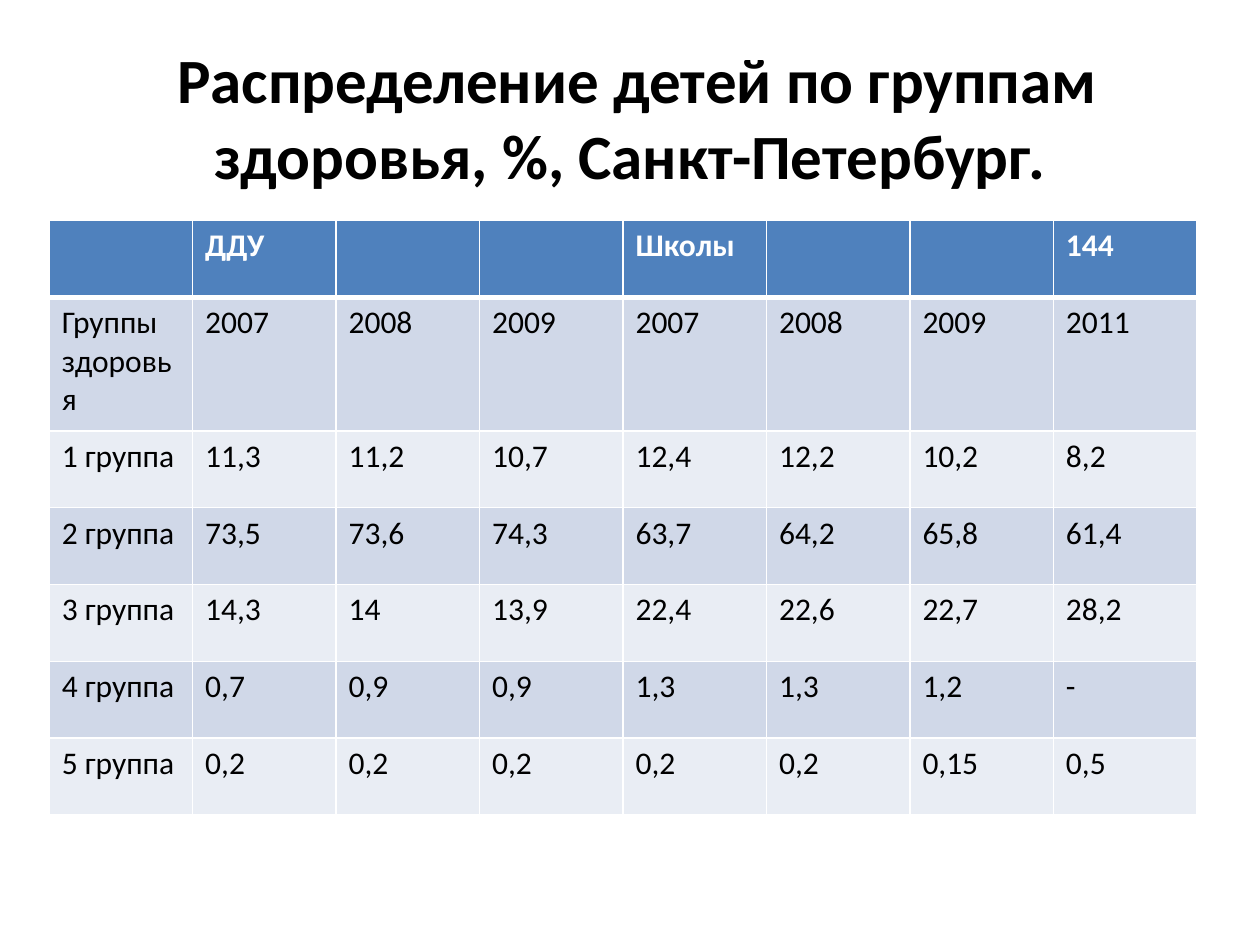
from dataclasses import dataclass

from lxml.etree import SubElement
from pptx import Presentation
from pptx.dml.color import RGBColor as Rgb
from pptx.enum.text import MSO_ANCHOR as Anchor, PP_ALIGN as Align
from pptx.oxml.ns import qn
from pptx.util import Inches, Pt


@dataclass(frozen=True)
class Theme:
    font: str = "Calibri"
    title_size: int = 36
    cell_size: int = 18
    ink: str = "000000"
    white: str = "FFFFFF"
    header: str = "4F81BD"
    bands: tuple = ("E9EDF4", "D0D8E8")
    thin: int = 1
    thick: int = 3


HEALTH_GROUPS = [
    ["", "ДДУ", "", "", "Школы", "", "", "144"],
    ["Группы здоровья", "2007", "2008", "2009", "2007", "2008", "2009", "2011"],
    ["1 группа", "11,3", "11,2", "10,7", "12,4", "12,2", "10,2", "8,2"],
    ["2 группа", "73,5", "73,6", "74,3", "63,7", "64,2", "65,8", "61,4"],
    ["3 группа", "14,3", "14", "13,9", "22,4", "22,6", "22,7", "28,2"],
    ["4 группа", "0,7", "0,9", "0,9", "1,3", "1,3", "1,2", "-"],
    ["5 группа", "0,2", "0,2", "0,2", "0,2", "0,2", "0,15", "0,5"],
]


class HealthSlide:
    """Builds one slide from a theme, with lengths as shares of the page."""

    def __init__(self, deck, theme):
        self.deck, self.theme = deck, theme
        self.page = deck.slides.add_slide(deck.slide_layouts[6])

    def across(self, share):
        return round(self.deck.slide_width * share)

    def down(self, share):
        return round(self.deck.slide_height * share)

    def place(self, left, top, width, height):
        return self.across(left), self.down(top), self.across(width), self.down(height)

    def style(self, para, size, color, bold):
        for span in para.runs:
            span.font.name = self.theme.font
            span.font.size = Pt(size)
            span.font.bold = bold
            span.font.color.rgb = Rgb.from_string(color)

    def title(self, text, *area):
        frame = self.page.shapes.add_textbox(*self.place(*area)).text_frame
        frame.word_wrap = True
        frame.vertical_anchor = Anchor.MIDDLE
        frame.text = text
        para = frame.paragraphs[0]
        para.alignment = Align.CENTER
        self.style(para, self.theme.title_size, self.theme.ink, True)

    def table(self, rows, row_shares, *area):
        box = self.page.shapes.add_table(len(rows), len(rows[0]), *self.place(*area))
        grid = box.table
        for row, share in zip(grid.rows, row_shares):
            row.height = self.down(share)
        for index, texts in enumerate(rows):
            for column, text in enumerate(texts):
                self.cell(grid.cell(index, column), text, index)

    def cell(self, cell, text, row):
        theme, is_header = self.theme, row == 0
        fill = theme.header if is_header else theme.bands[row % 2]
        top = theme.thick if row == 1 else theme.thin
        bottom = theme.thick if is_header else theme.thin
        self.borders(cell, lnL=theme.thin, lnR=theme.thin, lnT=top, lnB=bottom)
        cell.fill.solid()
        cell.fill.fore_color.rgb = Rgb.from_string(fill)
        cell.text_frame.text = text
        color = theme.white if is_header else theme.ink
        self.style(cell.text_frame.paragraphs[0], theme.cell_size, color, is_header)

    def borders(self, cell, **widths):
        properties = cell._tc.get_or_add_tcPr()
        for side, width in widths.items():
            line = SubElement(properties, qn(f"a:{side}"), w=str(Pt(width)))
            solid = SubElement(line, qn("a:solidFill"))
            SubElement(solid, qn("a:srgbClr"), val=self.theme.white)


def main():
    deck = Presentation()
    deck.slide_width, deck.slide_height = Inches(10), Inches(7.5)
    slide = HealthSlide(deck, Theme())
    slide.title(" Распределение детей по группам здоровья, %, Санкт-Петербург.",
                0.05, 0.04, 0.9, 1 / 6)
    plain, tall = 0.61 / 7.5, 1.06 / 7.5
    row_shares = [plain, tall] + [plain] * 5
    slide.table(HEALTH_GROUPS, row_shares, 0.039, 1.75 / 7.5, 0.911, sum(row_shares))
    deck.save("out.pptx")


if __name__ == "__main__":
    main()
